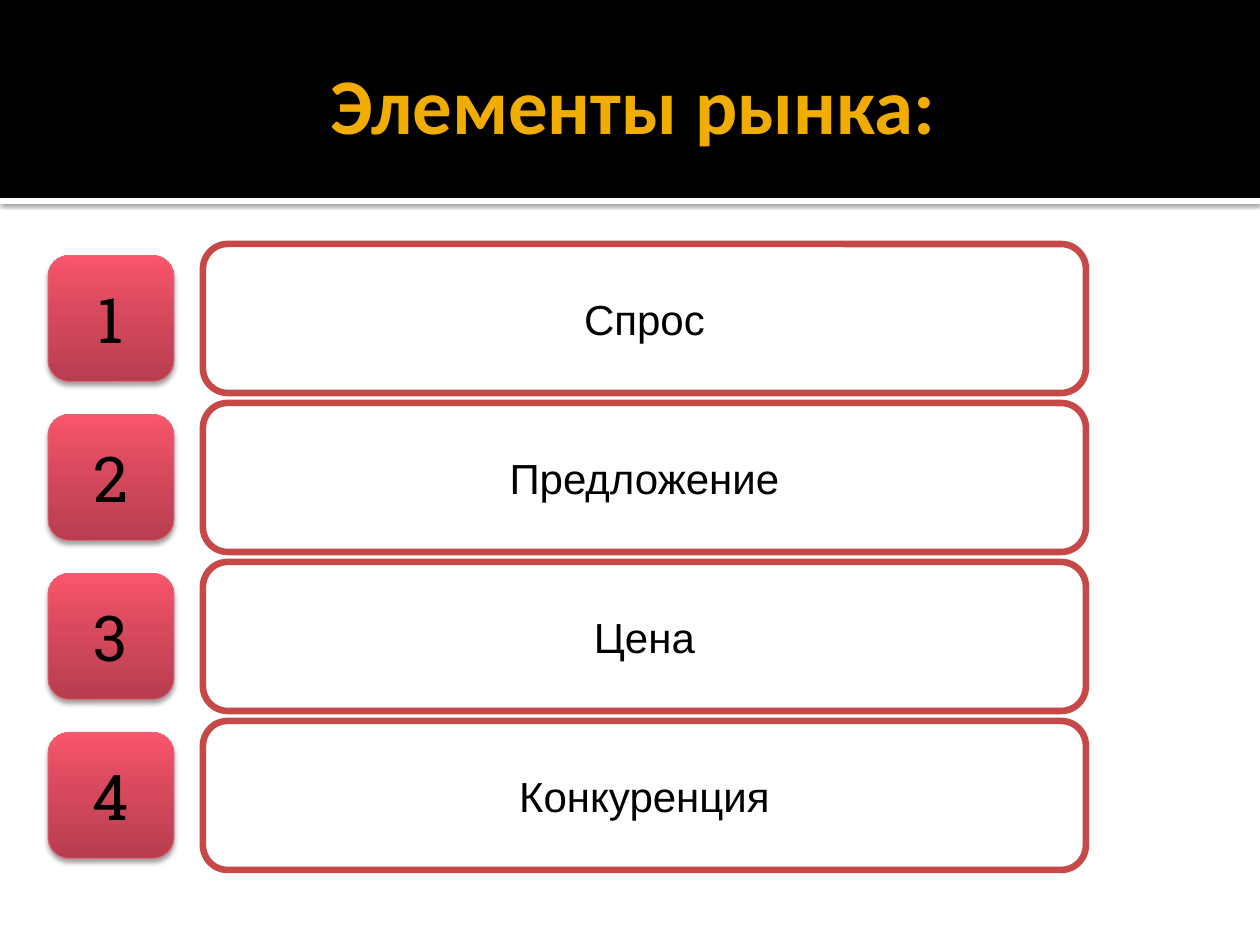
from copy import deepcopy

from lxml.etree import SubElement
from pptx import Presentation
from pptx.dml.color import RGBColor
from pptx.enum.shapes import MSO_SHAPE as Shape
from pptx.enum.text import MSO_ANCHOR as Anchor, PP_ALIGN as Align
from pptx.oxml.ns import qn
from pptx.util import Emu, Pt

TITLE = "Элементы рынка:"
ELEMENTS = ["Спрос", "Предложение", "Цена", "Конкуренция"]

BLACK = RGBColor(0x00, 0x00, 0x00)
WHITE = RGBColor(0xFF, 0xFF, 0xFF)
GOLD = RGBColor(0xF0, 0xAD, 0x00)
RED = RGBColor(0xC6, 0x48, 0x47)
PINK = RGBColor(0xE4, 0x67, 0x78)
BADGE_STOPS = [
    (0, RGBColor(0xB7, 0x3E, 0x4F)),
    (0.55, RGBColor(0xD7, 0x49, 0x5D)),
    (1, RGBColor(0xFA, 0x55, 0x6C)),
]

WIDTH, HEIGHT = 1260, 945
HEADER_HEIGHT, STRIP_HEIGHT = 198, 6
FIRST_TOP, PITCH = 244, 159
CARD_LEFT, CARD_WIDTH, CARD_HEIGHT = 203, 883, 149
BADGE_LEFT, BADGE_SIZE = 48, 126


def px(length):
    return Emu(round(length * 914400 / 126))


def add_block(slide, kind, box, fill=None, line=None, line_width=0):
    block = slide.shapes.add_shape(kind, *map(px, box))
    block.shadow.inherit = False
    if fill is not None:
        block.fill.solid()
        block.fill.fore_color.rgb = fill
    if line is None:
        block.line.fill.background()
    else:
        block.line.color.rgb = line
        block.line.width = Pt(line_width)
    return block


def write(block, text, font_name, size, color, bold=False):
    frame = block.text_frame
    frame.word_wrap = True
    frame.vertical_anchor = Anchor.MIDDLE
    paragraph = frame.paragraphs[0]
    paragraph.text = text
    paragraph.alignment = Align.CENTER
    font = paragraph.font
    font.name, font.size, font.bold = font_name, Pt(size), bold
    font.color.rgb = color


def cast_shadow(block, opacity, blur, distance):
    effects = block._element.spPr.find(qn("a:effectLst"))
    shadow = SubElement(
        effects, qn("a:outerShdw"), blurRad=str(Pt(blur)), dist=str(Pt(distance)),
        dir="5400000", algn="ctr", rotWithShape="0")
    color = SubElement(shadow, qn("a:srgbClr"), val=str(BLACK))
    SubElement(color, qn("a:alpha"), val=str(opacity * 1000))


def fill_gradient(block, stops):
    block.fill.gradient()
    block.fill.gradient_angle = 90
    stop_list = block._element.spPr.find(qn("a:gradFill")).find(qn("a:gsLst"))
    while len(stop_list) < len(stops):
        stop_list.append(deepcopy(stop_list[0]))
    for stop, (position, color) in zip(block.fill.gradient_stops, stops):
        stop.position = position
        stop.color.rgb = color


def add_header(slide):
    strip = add_block(slide, Shape.RECTANGLE,
                      (0, HEADER_HEIGHT, WIDTH, STRIP_HEIGHT), WHITE)
    cast_shadow(strip, 60, 2.5, 0.8)
    add_block(slide, Shape.RECTANGLE, (0, 0, WIDTH, HEADER_HEIGHT), BLACK)
    title = slide.shapes.add_textbox(*map(px, (63, 16, 1134, 173)))
    write(title, TITLE, "Calibri", 45, GOLD, bold=True)
    title.text_frame.margin_right = Pt(3.6)


def add_element(slide, index, name):
    top = FIRST_TOP + index * PITCH
    card = add_block(slide, Shape.ROUNDED_RECTANGLE,
                     (CARD_LEFT, top, CARD_WIDTH, CARD_HEIGHT), WHITE, RED, 3.78)
    write(card, name, "Arial", 24, BLACK)
    badge_top = top + (CARD_HEIGHT - BADGE_SIZE) / 2
    badge = add_block(slide, Shape.ROUNDED_RECTANGLE,
                      (BADGE_LEFT, badge_top, BADGE_SIZE, BADGE_SIZE),
                      line=PINK, line_width=0.5)
    fill_gradient(badge, BADGE_STOPS)
    cast_shadow(badge, 38, 3.1, 2)
    write(badge, str(index + 1), "Roboto Slab", 36, BLACK)


def main():
    deck = Presentation()
    deck.slide_width, deck.slide_height = px(WIDTH), px(HEIGHT)
    slide = deck.slides.add_slide(deck.slide_layouts[6])
    add_header(slide)
    for index, name in enumerate(ELEMENTS):
        add_element(slide, index, name)
    deck.save("out.pptx")


if __name__ == "__main__":
    main()
